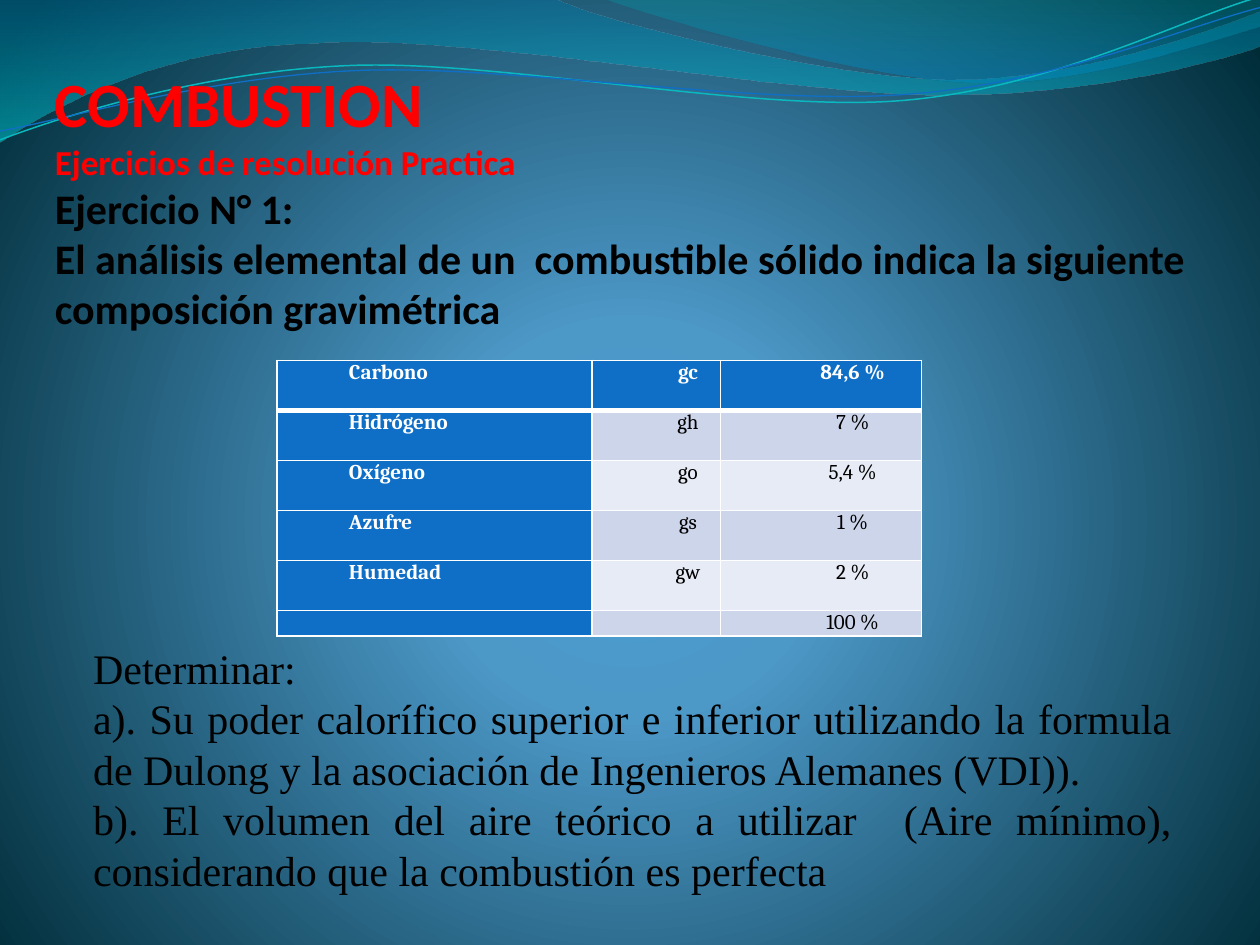
from math import cos, radians, sin

from lxml import etree
from pptx import Presentation
from pptx.dml.color import RGBColor
from pptx.enum.text import MSO_ANCHOR, MSO_AUTO_SIZE, PP_ALIGN
from pptx.oxml import parse_xml
from pptx.oxml.ns import nsdecls, qn
from pptx.util import Inches, Pt

LEFT, MID, JUST = PP_ALIGN.LEFT, PP_ALIGN.CENTER, PP_ALIGN.JUSTIFY
BOTTOM, FIXED, GROW = MSO_ANCHOR.BOTTOM, MSO_AUTO_SIZE.NONE, MSO_AUTO_SIZE.SHAPE_TO_FIT_TEXT

WIDE, HIGH = Inches(10), Inches(7.5)
COLS = 100
UNIT = WIDE // COLS
TURN = 357.3

THEME = {
    "blue": "0F6FC6", "teal": "0AB8BF", "white": "FFFFFF", "black": "000000",
    "red": "FF0000", "bands": ("CCD5EA", "E7EBF5"),
    "back": [(0, "4AA0D6", 100), (25, "4C98C7", 100), (100, "002C38", 100)],
    "broad": [(0, "0074A1", 45), (100, "00C6CF", 55)],
    "slim": [(0, "00A1A9", 30), (80, "008BBF", 45)],
    "head": {"name": "Calibri", "bold": True},
    "cell": {"name": "Cambria", "size": Pt(12)},
    "text": {"name": "Times New Roman", "size": Pt(24)},
}
DOWN = '<a:lin ang="5400000" scaled="0"/>'
ROUND = '<a:path path="circle"><a:fillToRect l="10000" t="110000" r="10000" b="100000"/></a:path>'

HEAD = [
    ("COMBUSTION", 36, "red"),
    ("Ejercicios de resolución Practica", 20, "red"),
    ("Ejercicio N° 1:", 24, "black"),
    ("El análisis elemental de un  combustible sólido indica la siguiente "
     "composición gravimétrica", 24, "black"),
]
ROWS = [
    ("Carbono", "gc", "84,6 %"), ("Hidrógeno", "gh", "7 %"), ("Oxígeno", "go", "5,4 %"),
    ("Azufre", "gs", "1 %"), ("Humedad", "gw", "2 %"), ("", "", "100 %"),
]
TASKS = [
    "Determinar:",
    "a). Su poder calorífico superior e inferior utilizando la formula de Dulong y la "
    "asociación de Ingenieros Alemanes (VDI)).",
    "b). El volumen del aire teórico a utilizar  (Aire mínimo), considerando que la "
    "combustión es perfecta",
]
BROAD = [
    (0, 0), (44, -0.1), (47.6, 1.7, 66.4, 6.3, 75.8, 6.3), (85.3, 6.3, 95.8, 2.6, 100, 0.9),
    (100.1, 3.6), (98.3, 4.4, 87, 7.6, 74.6, 7.5), (62.2, 7.5, 38.2, 2.8, 25.7, 3.4),
    (12.9, 3.6, 4.6, 8.3, -0.1, 11.3), (0, 0),
]
SLIM = [
    (47.9, -0.1), (50.9, 1.1, 68.2, 6.2, 76.9, 6.5), (85.6, 6.9, 96.1, 3.2, 100, 2.1),
    (100, 0), (47.9, -0.1),
]
LINES = [
    ([(0, 11.1), (4.8, 9.3, 15.8, 5.7, 27.7, 5.2), (39.5, 4.7, 59.3, 8.9, 71.3, 8),
      (83.3, 7.1, 93.8, 1.5, 99.8, -0.2)], (49.9, 5.75), "teal", 0.85),
    ([(0, 10.4), (4.7, 9.6, 16.4, 6.1, 28.3, 5.6), (40.3, 5.1, 59.7, 8.4, 71.7, 7.5),
      (83.6, 6.7, 94.1, 2.1, 100, 0.6)], (49.95, 5.9), "blue", 0.75),
]


def grid(*units):
    """Turn grid units into lengths."""
    return [round(u * UNIT) for u in units]


def tint(name):
    """Look up a theme colour."""
    return RGBColor.from_string(THEME.get(name, name))


def style(item, values):
    """Set each attribute from a dict of values."""
    for key, value in values.items():
        setattr(item, key, value)


def write(par, text, font, ink):
    """Add a formatted run to a paragraph."""
    run = par.add_run()
    run.text = text
    style(run.font, font)
    run.font.color.rgb = tint(ink)


def shade(fill, stops, form):
    """Give a fill a gradient with opacity stops."""
    marks = "".join(
        f'<a:gs pos="{pos * 1000}"><a:srgbClr val="{ink}">'
        f'<a:alpha val="{alpha * 1000}"/></a:srgbClr></a:gs>' for pos, ink, alpha in stops)
    fill.gradient()
    old = fill._xPr.find(qn("a:gradFill"))
    new = parse_xml(f'<a:gradFill {nsdecls("a")} rotWithShape="1">'
                    f'<a:gsLst>{marks}</a:gsLst>{form}</a:gradFill>')
    old.getparent().replace(old, new)


def bend(shape, steps):
    """Join each three segments of a curved step into one cubic."""
    marks = iter(list(shape._element.iter(qn("a:lnTo"))))
    for step in steps[1:]:
        first = next(marks)
        if len(step) == 2:
            continue
        cubic = etree.Element(qn("a:cubicBezTo"))
        first.addprevious(cubic)
        for mark in (first, next(marks), next(marks)):
            cubic.append(mark[0])
            mark.getparent().remove(mark)


def spin(steps, centre, angle):
    """Rotate steps about a centre."""
    c, s = cos(radians(angle)), sin(radians(angle))
    x, y = centre
    return [tuple(v for a, b in zip(step[::2], step[1::2])
                  for v in (x + c * (a - x) - s * (b - y), y + s * (a - x) + c * (b - y)))
            for step in steps]


def wave(shapes, steps, close):
    """Draw a curved outline."""
    start, *rest = [grid(*step[i:i + 2]) for step in steps for i in range(0, len(step), 2)]
    pen = shapes.build_freeform(*start)
    pen.add_line_segments(rest, close=False)
    shape = pen.convert_to_shape()
    bend(shape, steps)
    if close:
        etree.SubElement(next(shape._element.iter(qn("a:path"))), qn("a:close"))
    shape.shadow.inherit = False
    return shape


def band(slide, steps, stops):
    """Draw a filled wave."""
    shape = wave(slide.shapes, steps, True)
    shade(shape.fill, stops, DOWN)
    shape.line.fill.background()


def curve(group, steps, centre, ink, width):
    """Draw a tilted wave line."""
    shape = wave(group.shapes, spin(steps, centre, -TURN), False)
    shape.rotation = TURN
    shape.fill.background()
    shape.line.color.rgb = tint(ink)
    shape.line.width = Pt(width)


def title(slide):
    """Fill the title and bring it to the front."""
    head = slide.shapes.title
    slide.shapes._spTree.append(head._element)
    style(head, dict(zip(("left", "top", "width", "height"), grid(4.35, 8.4, 91.3, 24.8))))
    style(head.text_frame, {
        "margin_left": 0, "margin_top": 0, "margin_right": 0, "margin_bottom": grid(6.75)[0],
        "vertical_anchor": BOTTOM, "word_wrap": True, "auto_size": FIXED})
    par = head.text_frame.paragraphs[0]
    par.alignment = LEFT
    for i, (text, size, ink) in enumerate(HEAD):
        if i:
            par.add_line_break()
        write(par, text, {**THEME["head"], "size": Pt(size)}, ink)


def edge(cell, row):
    """Draw the borders of a cell, heavy below the header."""
    props = cell._tc.get_or_add_tcPr()
    heavy = {(0, "B"), (1, "T")}
    for i, side in enumerate("LRTB"):
        width = Pt(3 if (row, side) in heavy else 1)
        line = etree.Element(qn(f"a:ln{side}"), w=str(width))
        fill = etree.SubElement(line, qn("a:solidFill"))
        etree.SubElement(fill, qn("a:srgbClr"), val=THEME["white"])
        props.insert(i, line)


def entry(cell, text, row, col):
    """Fill and format one table cell."""
    key = row == 0 or col == 0
    style(cell, {"margin_left": grid(0.7)[0], "margin_right": grid(0.7)[0],
                 "margin_top": 0, "margin_bottom": 0})
    cell.fill.solid()
    cell.fill.fore_color.rgb = tint("blue" if key else THEME["bands"][(row - 1) % 2])
    edge(cell, row)
    par = cell.text_frame.paragraphs[0]
    par.alignment = MID if col else JUST
    par._p.get_or_add_pPr().set("marL", str(grid(5)[0]))
    if text:
        write(par, text, {**THEME["cell"], "bold": key}, "white" if key else "black")
    else:
        par._p.get_or_add_endParaRPr().set("sz", "1200")


def table(slide):
    """Add the table of fuel parts."""
    frame = slide.shapes.add_table(len(ROWS), 3, *grid(22, 28.6, 51.2, 21.9))
    for col, width in zip(frame.table.columns, grid(25, 10.2, 15.95)):
        col.width = width
    for r, row in enumerate(ROWS):
        frame.table.rows[r].height = grid(3.97 if row[0] else 1.98)[0]
        for c, text in enumerate(row):
            entry(frame.table.cell(r, c), text, r, c)


def tasks(slide):
    """Add the questions to solve."""
    frame = slide.shapes.add_textbox(*grid(1.9, 50.5, 92.1, 21.2)).text_frame
    style(frame, {"word_wrap": True, "auto_size": GROW})
    for i, text in enumerate(TASKS):
        par = frame.add_paragraph() if i else frame.paragraphs[0]
        par.alignment = JUST
        par._p.get_or_add_pPr().set("marL", str(grid(4.5)[0]))
        write(par, text, THEME["text"], "black")


def main():
    """Build and save the slide."""
    deck = Presentation()
    style(deck, {"slide_width": WIDE, "slide_height": HIGH})
    slide = deck.slides.add_slide(deck.slide_layouts[5])
    shade(slide.background.fill, THEME["back"], ROUND)
    band(slide, BROAD, THEME["broad"])
    band(slide, SLIM, THEME["slim"])
    group = slide.shapes.add_group_shape()
    for line in LINES:
        curve(group, *line)
    title(slide)
    table(slide)
    tasks(slide)
    deck.save("out.pptx")


if __name__ == "__main__":
    main()
